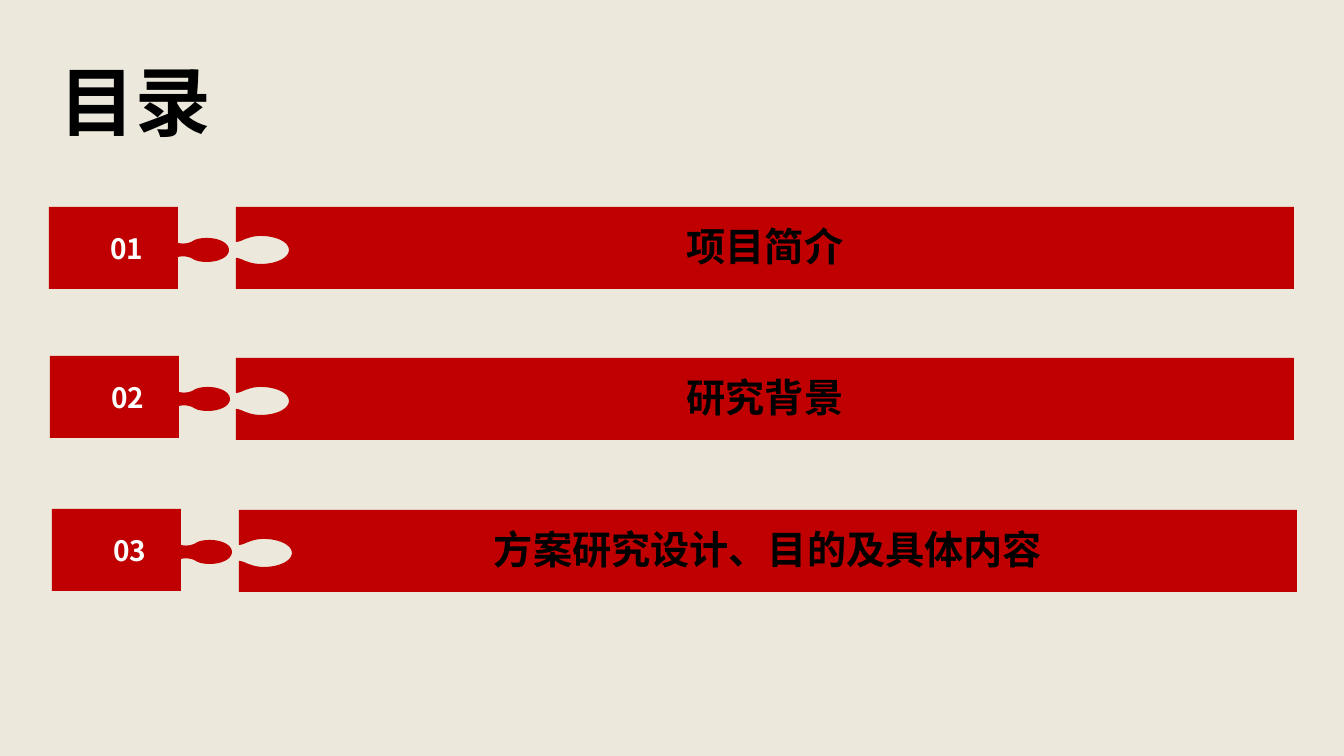
import pptx
import pptx.dml.color
import pptx.enum.text
import pptx.oxml.ns
import pptx.util
from lxml import etree

PX = 914400 / 100.8
FONT = "Noto Sans CJK SC"
COLORS = {"paper": "ECE8DC", "red": "C00000", "white": "FFFFFF", "black": "000000"}
STEPS = 12
AXIS, HEIGHT = 43, 82
TAB_WIDTH, BAR_WIDTH = 129, 1058

# Cubic curves as (x, distance above the axis), from the edge to the round tip.
KNOB = [(129, 7), (133, 6), (139, 6), (144, 9), (147, 11), (152, 12), (158, 12),
        (170, 12), (180, 7), (180, 0)]
SOCKET = [(0, 8), (2, 8), (5, 9), (7, 10), (12, 12), (17, 14), (25, 14),
          (40, 14), (53, 8), (53, 0)]


def puzzle_outline(curve):
    """Trace the curve above the axis to its tip, then back mirrored below it."""
    half = [curve[0]]
    for start in range(0, len(curve) - 1, 3):
        a, b, c, d = curve[start:start + 4]
        for step in range(1, STEPS + 1):
            t = step / STEPS
            half.append([(1 - t) ** 3 * p + 3 * (1 - t) ** 2 * t * q
                         + 3 * (1 - t) * t ** 2 * r + t ** 3 * s
                         for p, q, r, s in zip(a, b, c, d)])
    upper = [(x, AXIS - rise) for x, rise in half]
    lower = [(x, AXIS + rise) for x, rise in reversed(half[:-1])]
    return upper + lower


def write_text(shape, text, size, color, align, margins):
    frame = shape.text_frame
    frame.word_wrap = True
    frame.vertical_anchor = pptx.enum.text.MSO_ANCHOR.MIDDLE
    for side, margin in margins.items():
        setattr(frame, f"margin_{side}", round(margin * PX))
    paragraph = frame.paragraphs[0]
    paragraph.alignment = align
    run = paragraph.add_run()
    run.text = text
    for name, value in {"name": FONT, "size": pptx.util.Pt(size), "bold": True}.items():
        setattr(run.font, name, value)
    run.font.color.rgb = pptx.dml.color.RGBColor.from_string(COLORS[color])
    east_asian = etree.SubElement(run.font._element, pptx.oxml.ns.qn("a:ea"))
    east_asian.set("typeface", FONT)
    return paragraph


deck = pptx.Presentation()
deck.slide_width = round(1344 * PX)
deck.slide_height = round(756 * PX)
slide = deck.slides.add_slide(deck.slide_layouts[6])
slide.background.fill.solid()
slide.background.fill.fore_color.rgb = pptx.dml.color.RGBColor.from_string(COLORS["paper"])

heading = slide.shapes.add_textbox(*(round(v * PX) for v in (50, 46, 1222, 119)))
heading_line = write_text(heading, "目录", 54, "black", pptx.enum.text.PP_ALIGN.LEFT,
                          {"left": 10, "right": 10, "top": 5, "bottom": 5})
heading_line.line_spacing = 0.9

tab_outline = [(0, HEIGHT), (0, 0), (TAB_WIDTH, 0), *puzzle_outline(KNOB), (TAB_WIDTH, HEIGHT)]
bar_outline = [(BAR_WIDTH, HEIGHT), (BAR_WIDTH, 0), (0, 0), *puzzle_outline(SOCKET), (0, HEIGHT)]

tab_margins = {"left": 0, "right": 24, "top": 0, "bottom": 0}
bar_margins = {"left": 0, "right": 0, "top": 0, "bottom": 4}

chapters = [
    ("项目简介", (49, 207), (236, 207)),
    ("研究背景", (50, 356), (236, 358)),
    ("方案研究设计、目的及具体内容", (52, 509), (239, 510)),
]
for number, (chapter, tab_at, bar_at) in enumerate(chapters, 1):
    for text, (left, top), outline, size, color, margins in (
        (f"{number:02}", tab_at, tab_outline, 20, "white", tab_margins),
        (chapter, bar_at, bar_outline, 28, "black", bar_margins),
    ):
        points = [((left + x) * PX, (top + y) * PX) for x, y in outline]
        builder = slide.shapes.build_freeform(*points[0])
        builder.add_line_segments(points[1:], close=True)
        piece = builder.convert_to_shape()
        piece.shadow.inherit = False
        piece.fill.solid()
        piece.fill.fore_color.rgb = pptx.dml.color.RGBColor.from_string(COLORS["red"])
        piece.line.fill.background()
        write_text(piece, text, size, color, pptx.enum.text.PP_ALIGN.CENTER, margins)

deck.save("out.pptx")
